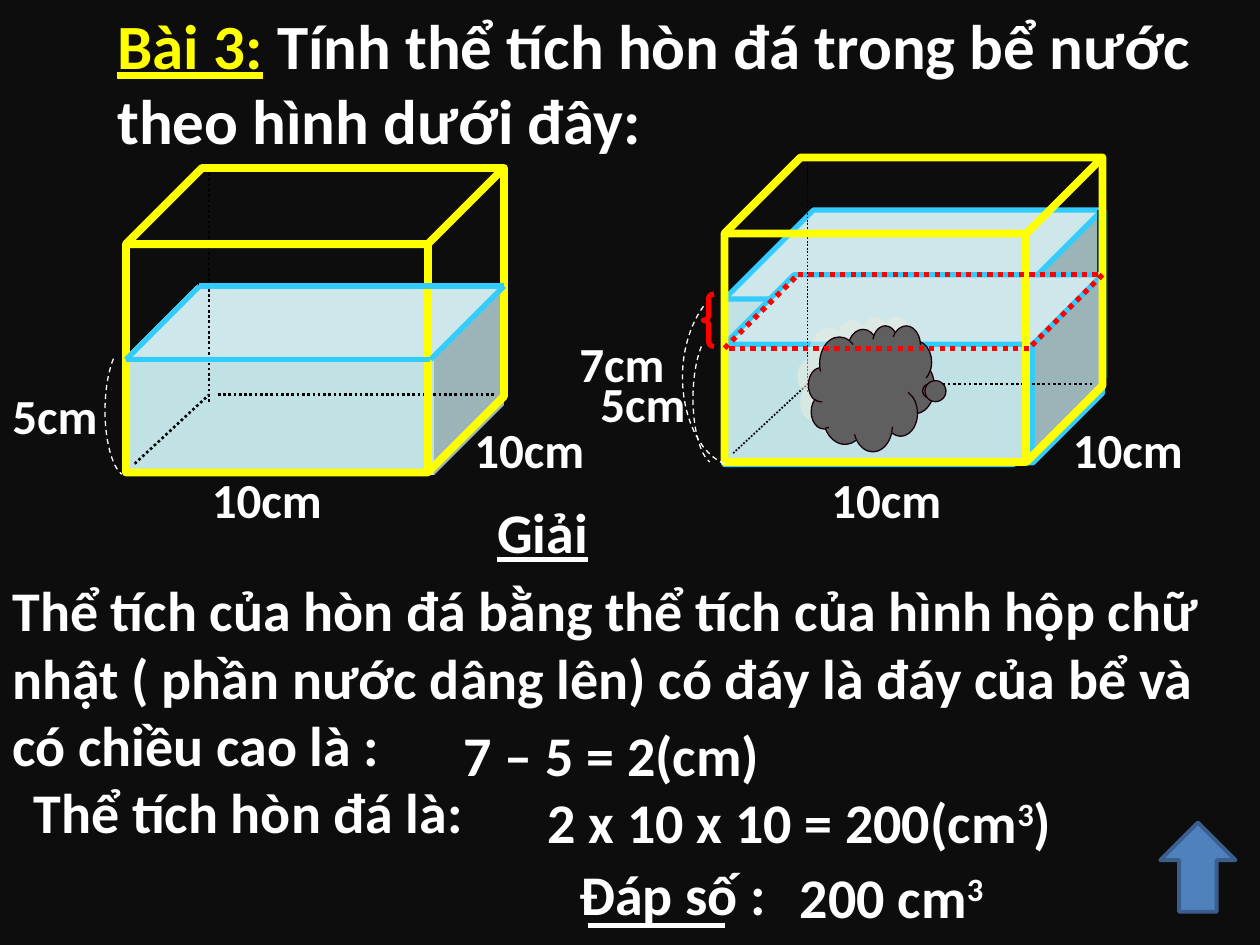
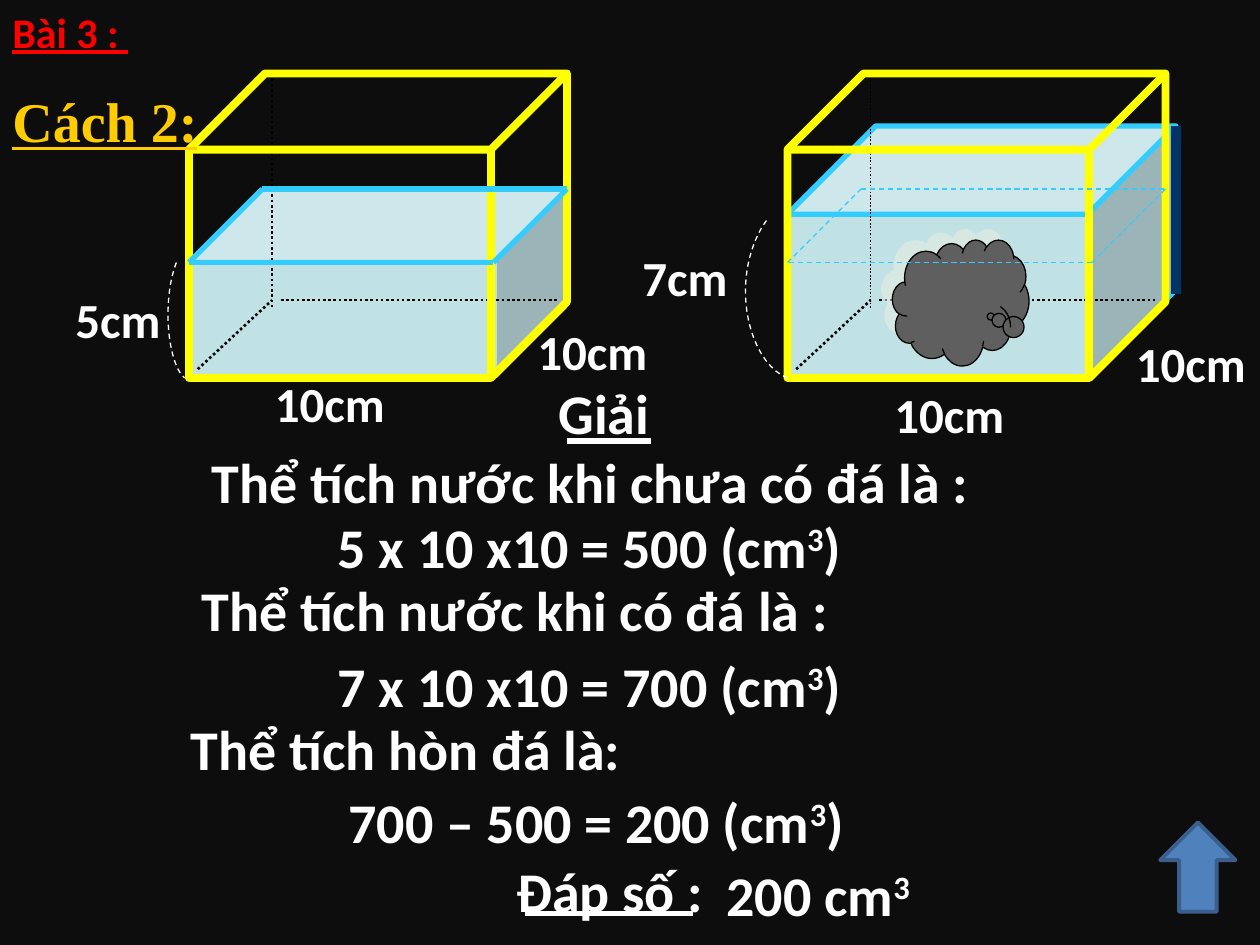
from lxml.etree import SubElement
from pptx import Presentation
from pptx.dml.color import RGBColor
from pptx.enum.dml import MSO_LINE
from pptx.enum.shapes import MSO_CONNECTOR, MSO_SHAPE
from pptx.enum.text import MSO_AUTO_SIZE
from pptx.oxml.ns import qn
from pptx.util import Pt

BACKGROUND, WHITE, YELLOW, RED = "0D0D0D", "FFFFFF", "FFFF00", "FF0000"
WATER, WATER_EDGE, WATER_SHADE = "C1E2E5", "33CCFF", "003366"
BODY_SIZE, LABEL_SIZE = 32, 28
TANK_WIDTH, TANK_HEIGHT = 216, 174


def color(hex_string):
    return RGBColor.from_string(hex_string)


# Basic parts
def style_line(line, hex_string, width, dash=None):
    line.color.rgb = color(hex_string)
    line.width = Pt(width)
    if dash:
        line.dash_style = dash


def add_line(slide, start, end, hex_string, width, dash=None):
    connector = slide.shapes.add_connector(
        MSO_CONNECTOR.STRAIGHT, *(Pt(value) for value in (*start, *end)))
    style_line(connector.line, hex_string, width, dash)
    SubElement(connector._element.spPr, qn("a:effectLst"))


def add_shape(slide, kind, box, adjustments=(), fill=None, line=None):
    shape = slide.shapes.add_shape(kind, *(Pt(value) for value in box))
    shape.shadow.inherit = False
    for index, value in enumerate(adjustments):
        shape.adjustments[index] = value
    if fill:
        shape.fill.solid()
        shape.fill.fore_color.rgb = color(fill)
    else:
        shape.fill.background()
    if line:
        style_line(shape.line, *line)
    else:
        shape.line.fill.background()
    return shape


def text_run(text, size=BODY_SIZE, hex_string=WHITE, underline=False,
             font="Calibri", raised=False):
    return text, size, hex_string, underline, font, raised


def cubic(text, ending=""):
    runs = [text_run(text), text_run("3", raised=True)]
    return runs + [text_run(ending)] if ending else runs


def add_text(slide, box, *paragraphs):
    text_box = slide.shapes.add_textbox(*(Pt(value) for value in box))
    frame = text_box.text_frame
    frame.word_wrap = True
    frame.auto_size = MSO_AUTO_SIZE.SHAPE_TO_FIT_TEXT
    for index, runs in enumerate(paragraphs):
        paragraph = frame.add_paragraph() if index else frame.paragraphs[0]
        if index:
            paragraph.space_before = Pt(17)
        for text, size, hex_string, underline, font, raised in runs:
            run = paragraph.add_run()
            run.text = text
            run.font.size = Pt(size)
            run.font.name = font
            run.font.bold = True
            run.font.underline = underline
            run.font.color.rgb = color(hex_string)
            if raised:
                run.font._element.set("baseline", "30000")


# Water, glass and stone
def add_water(slide, box, depth, outlined=True):
    line = (WATER_EDGE, 3) if outlined else None
    add_shape(slide, MSO_SHAPE.CUBE, box, [depth], WATER, line)


def add_high_water(slide, left, top, width, height):
    add_water(slide, (left, top, width, height), 0.35)
    right = left + width
    add_line(slide, (right, top), (right, top + 96), WATER_SHADE, 6)


def add_glass(slide, left, top, thin=(1.5, 1.5, 1.5)):
    hidden_edges = [((47.5, 0), (47.5, 134.5)),
                    ((5, 169), (47.5, 129.5)),
                    ((52.5, 129.5), (211, 129.5))]
    for (start, end), width in zip(hidden_edges, thin):
        add_line(slide, (left + start[0], top + start[1]),
                 (left + end[0], top + end[1]),
                 "000000", width, MSO_LINE.ROUND_DOT)
    add_shape(slide, MSO_SHAPE.CUBE, (left, top, TANK_WIDTH, TANK_HEIGHT),
              [0.25], line=(YELLOW, 4.5))


def add_surface(slide, left, top, hex_string, width, dash=None):
    right, slant = left + TANK_WIDTH, 42
    corners = [(left, top + slant), (right - slant, top + slant),
               (right, top), (left + slant, top)]
    for index, corner in enumerate(corners):
        add_line(slide, corner, corners[index - 1], hex_string, width, dash)


def add_low_tank(slide, left, top, water_offset):
    water_top = top + water_offset
    add_water(slide, (left, water_top, TANK_WIDTH, 108), 0.37, outlined=False)
    add_glass(slide, left, top)
    return water_top


def add_stone(slide, box, tail, edge, distance, angle):
    stone = add_shape(slide, MSO_SHAPE.CLOUD_CALLOUT, box, tail, "5F5F5F", (edge, 0.75))
    effects = stone._element.spPr.find(qn("a:effectLst"))
    shadow = SubElement(effects, qn("a:outerShdw"), blurRad="0",
                        dist=str(Pt(distance)), dir=str(angle * 60000),
                        algn="ctr", rotWithShape="0")
    shade = SubElement(shadow, qn("a:srgbClr"), val="EEECE1")
    SubElement(shade, qn("a:alpha"), val="50000")


# Measures
def bezier(points, t):
    weights = ((1 - t) ** 3, 3 * t * (1 - t) ** 2, 3 * t ** 2 * (1 - t), t ** 3)
    return tuple(sum(weight * point[axis] for weight, point in zip(weights, points))
                 for axis in (0, 1))


def add_depth(slide, box, text, label_gap):
    left, top, width, height = box
    upper = [(0.4, 0), (0.16, 0.11), (0, 0.27), (0, 0.45)]
    lower = [(0, 0.45), (0, 0.71), (0.34, 0.94), (0.8, 1)]
    steps = 12
    curve = [bezier(part, step / steps)
             for part in (upper, lower) for step in range(steps + 1)]
    points = [(Pt(left + x * width), Pt(top + y * height)) for x, y in curve]
    builder = slide.shapes.build_freeform(*points[0])
    builder.add_line_segments(points[1:], close=False)
    arc = builder.convert_to_shape()
    arc.shadow.inherit = False
    arc.fill.background()
    style_line(arc.line, WHITE, 0.75, MSO_LINE.DASH)
    add_text(slide, (left - label_gap, top + 12, 66, 41), [text_run(text, LABEL_SIZE)])


def add_side_labels(slide, positions):
    for left, top in positions:
        add_text(slide, (left, top, 90, 41), [text_run("10cm", LABEL_SIZE)])


# Worked solution
def add_solution(slide, lines):
    for left, top, width, runs in lines:
        add_text(slide, (left, top, width, 45), runs)


def add_underlined(slide, box, text, line_left, line_right, line_top):
    add_text(slide, box, [text_run(text)])
    add_line(slide, (line_left, line_top), (line_right, line_top), WHITE, 3)


def add_up_arrow(slide):
    arrow = add_shape(slide, MSO_SHAPE.RIGHT_ARROW, (659, 474, 51, 43),
                      fill="4F81BD", line=("3A5F8C", 2.25))
    arrow.rotation = 270


def new_slide(presentation):
    slide = presentation.slides.add_slide(presentation.slide_layouts[6])
    slide.background.fill.solid()
    slide.background.fill.fore_color.rgb = color(BACKGROUND)
    return slide


def build_first_method(presentation):
    slide = new_slide(presentation)
    # Tanks
    add_high_water(slide, 414, 120, 216, 145.5)
    add_water(slide, (414, 157, 216, 107.5), 0.37)
    low_surface = add_low_tank(slide, 72, 96, 67.5)
    add_glass(slide, 414, 90, (1, 1, 1.5))
    add_stone(slide, (462, 186, 72, 72), (0.47, 0.02), "1A000D", 7.8, 220)
    add_surface(slide, 414, 157, RED, 3, MSO_LINE.ROUND_DOT)
    add_surface(slide, 72, low_surface, WATER_EDGE, 3)
    # Measures
    add_depth(slide, (60, 205, 12, 66), "5cm", 60)
    add_depth(slide, (390, 175, 30, 90), "7cm", 66)
    add_depth(slide, (396, 198, 12, 66), "5cm", 60)
    add_side_labels(slide, [(114, 265), (468, 265), (264, 236), (606, 236)])
    add_shape(slide, MSO_SHAPE.LEFT_BRACE, (402, 168, 6, 30), [0.42, 0.5], line=(RED, 3))
    # Task and solution
    add_text(slide, (60, 0, 660, 94), [
        text_run("Bài 3:", 36, YELLOW, True),
        text_run(" Tính thể tích hòn đá trong bể nước theo hình dưới đây:", 36)])
    add_text(slide, (0, 325.5, 720, 122), [text_run(
        "Thể tích của hòn đá bằng thể tích của hình hộp chữ nhật "
        "( phần nước dâng lên) có đáy là đáy của bể và có chiều cao là :")])
    add_solution(slide, [
        (258, 408, 264, [text_run("7 – 5 = 2(cm)")]),
        (12, 441, 378, [text_run("Thể tích hòn đá là:")]),
        (306, 446.5, 378, cubic("2 x 10 x 10 = 200(cm", ")")),
        (277, 281, 138, [text_run("Giải", underline=True)]),
        (450, 489.5, 198, cubic("200 cm"))])
    add_underlined(slide, (324, 487.5, 162, 45), "Đáp số :", 336, 414, 529)
    add_up_arrow(slide)


def build_second_method(presentation):
    slide = new_slide(presentation)
    # Tanks
    add_high_water(slide, 450, 72, 222, 144)
    low_surface = add_low_tank(slide, 108, 42, 66)
    add_glass(slide, 450, 42, (1, 1.5, 1.5))
    add_stone(slide, (510, 137, 78, 72), (0.22, 0.11), "000000", 8.5, 225)
    add_surface(slide, 450, 108, WATER_EDGE, 0.75, MSO_LINE.DASH)
    add_surface(slide, 108, low_surface, WATER_EDGE, 3)
    # Measures
    add_depth(slide, (96, 150, 12, 66), "5cm", 60)
    add_depth(slide, (426, 126, 30, 90), "7cm", 66)
    add_side_labels(slide, [(150, 210), (504, 216), (300, 180), (642, 187)])
    # Heading and solution
    add_text(slide, (0, 0, 150, 94),
             [text_run("Bài 3 : ", 24, RED, True)],
             [text_run("Cách 2:", BODY_SIZE, "FFCC00", True, "Times New Roman")])
    add_underlined(slide, (312, 213, 90, 45), "Giải", 324, 372, 252)
    add_solution(slide, [
        (114, 252, 504, [text_run("Thể tích nước khi chưa có đá là :")]),
        (186, 289.5, 438, cubic("5 x 10 x10 = 500 (cm", ")")),
        (108, 325.5, 420, [text_run("Thể tích nước khi có đá là :")]),
        (186, 368.5, 402, cubic("7 x 10 x10 = 700 (cm", ")")),
        (102, 404.5, 384, [text_run("Thể tích hòn đá là:")]),
        (192, 446.5, 348, cubic("700 – 500 = 200 (cm", ")")),
        (408, 488, 156, cubic("200 cm"))])
    add_underlined(slide, (288, 486, 132, 45), "Đáp số :", 300, 396, 522)
    add_up_arrow(slide)


def main():
    presentation = Presentation()
    presentation.slide_width, presentation.slide_height = Pt(720), Pt(540)
    build_first_method(presentation)
    build_second_method(presentation)
    presentation.save("out.pptx")


if __name__ == "__main__":
    main()
